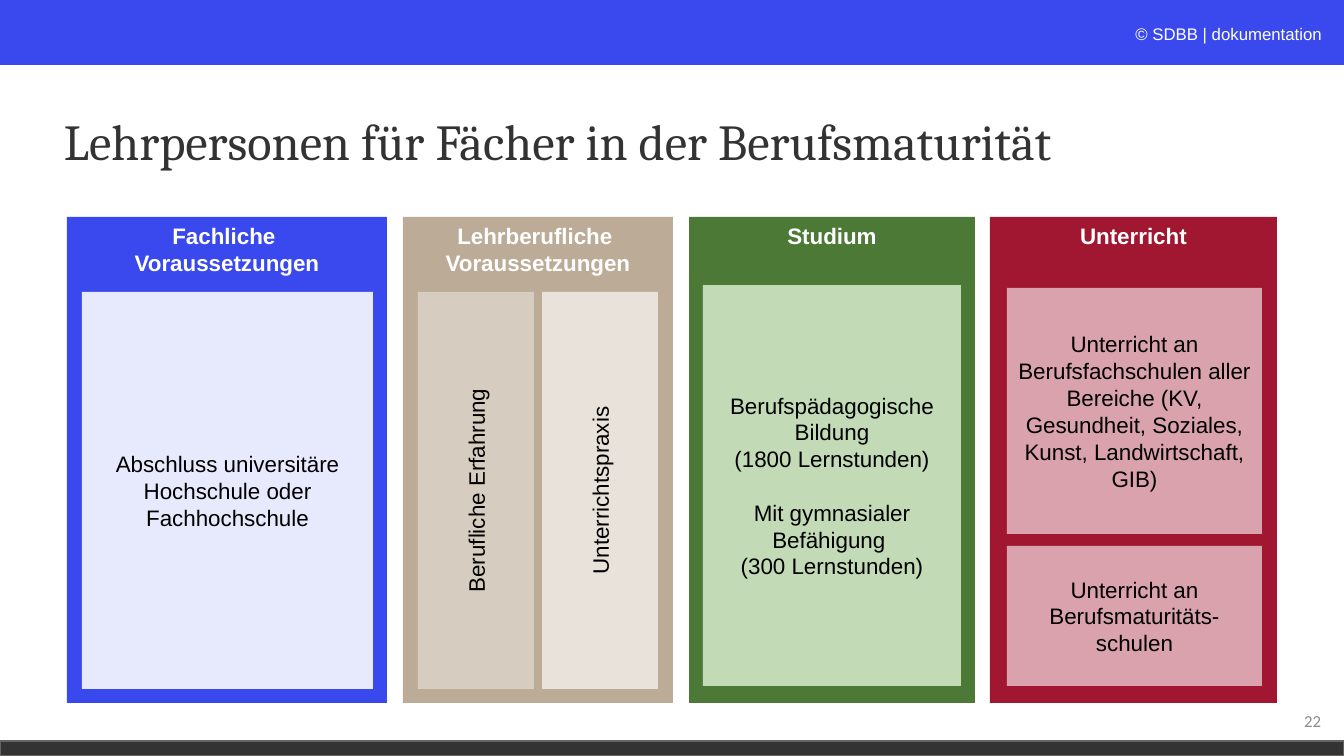
import pptx
import pptx.dml.color
import pptx.enum.shapes
import pptx.enum.text
import pptx.util

EMU_PER_PX = 914400 / 100.8
ALIGN = pptx.enum.text.PP_ALIGN
ANCHOR = pptx.enum.text.MSO_ANCHOR

COLORS = {
    "blue": "3A49EE", "light_blue": "E7E9FD",
    "sand": "BCAB96", "mid_sand": "D6CCBF", "light_sand": "E8E2DB",
    "green": "4C7936", "light_green": "C2DAB6",
    "red": "A11731", "light_red": "DAA2AD",
    "dark": "333333", "border": "666360", "gray": "8C8C8C",
    "white": "FFFFFF", "black": "000000",
}

PANEL_TOP, PANEL_HEIGHT = 217, 486

# Left, width, color, heading
PANELS = [
    (67, 320, "blue", "Fachliche \vVoraussetzungen"),
    (403, 270, "sand", "Lehrberufliche \nVoraussetzungen"),
    (689, 286, "green", "Studium"),
    (990, 287, "red", "Unterricht"),
]

# Left, top, width, height, color, text
CARDS = [
    (82, 292, 291, 397, "light_blue",
     "Abschluss universitäre Hochschule oder Fachhochschule"),
    (703, 285, 258, 401, "light_green",
     "Berufspädagogische Bildung\n(1800 Lernstunden)\n"
     "Mit gymnasialer Befähigung \n(300 Lernstunden)"),
    (1007, 288, 255, 246, "light_red",
     "Unterricht an Berufsfachschulen aller Bereiche "
     "(KV, Gesundheit, Soziales, Kunst, Landwirtschaft, GIB)"),
    (1007, 546, 255, 140, "light_red",
     "Unterricht an Berufsmaturitäts-schulen"),
]

# Left, color, text
VERTICAL_CARDS = [
    (418, "mid_sand", "Berufliche Erfahrung"),
    (542, "light_sand", "Unterrichtspraxis"),
]


def px(value):
    return pptx.util.Emu(round(value * EMU_PER_PX))


def rgb(name):
    return pptx.dml.color.RGBColor.from_string(COLORS[name])


def write_text(shape, text, size, color, align, anchor, font="Arial", bold=False):
    frame = shape.text_frame
    frame.text = text
    frame.word_wrap = True
    frame.vertical_anchor = anchor
    for paragraph in frame.paragraphs:
        paragraph.alignment = align
        for run in paragraph.runs:
            run.font.name = font
            run.font.size = pptx.util.Pt(size)
            run.font.bold = bold
            run.font.color.rgb = rgb(color)
    return frame


def add_bar(slide, left, top, width, height, color):
    shape = slide.shapes.add_shape(
        pptx.enum.shapes.MSO_SHAPE.RECTANGLE,
        px(left), px(top), px(width), px(height))
    shape.shadow.inherit = False
    shape.fill.solid()
    shape.fill.fore_color.rgb = rgb(color)
    shape.line.fill.background()
    return shape


def add_panel(slide, left, width, color, heading):
    shape = add_bar(slide, left, PANEL_TOP, width, PANEL_HEIGHT, color)
    write_text(shape, heading, 16, "white", ALIGN.CENTER, ANCHOR.TOP, bold=True)


def add_card(slide, left, top, width, height, color, text):
    shape = add_bar(slide, left, top, width, height, color)
    write_text(shape, text, 16, "black", ALIGN.CENTER, ANCHOR.MIDDLE)
    return shape


def add_label(slide, left, top, width, height, text, size, color, align, anchor,
              font="Arial"):
    box = slide.shapes.add_textbox(px(left), px(top), px(width), px(height))
    return write_text(box, text, size, color, align, anchor, font)


def main():
    presentation = pptx.Presentation()
    presentation.slide_width = px(1344)
    presentation.slide_height = px(756)
    slide = presentation.slides.add_slide(presentation.slide_layouts[6])

    # Header, footer and page number
    add_bar(slide, 0, 0, 1344, 65, "blue")
    footer = add_bar(slide, 0, 741, 1344, 15, "dark")
    footer.line.color.rgb = rgb("border")
    footer.line.width = pptx.util.Pt(1)
    add_label(slide, 869, 19, 463, 30, "© SDBB | dokumentation", 12, "white",
              ALIGN.RIGHT, ANCHOR.TOP)
    add_label(slide, 1029, 701, 302, 40, "22", 12, "gray",
              ALIGN.RIGHT, ANCHOR.MIDDLE, "Calibri")

    # Title
    title = add_label(slide, 54, 71, 1159, 146,
                      "Lehrpersonen für Fächer in der Berufsmaturität", 36,
                      "dark", ALIGN.LEFT, ANCHOR.MIDDLE, "Cambria")
    title.paragraphs[0].line_spacing = 0.9

    # Four panels with their cards
    for panel in PANELS:
        add_panel(slide, *panel)
    for card in CARDS:
        shape = add_card(slide, *card)
        # Space between the two courses of study
        for paragraph in shape.text_frame.paragraphs[2:3]:
            paragraph.space_before = pptx.util.Pt(19)

    # Cards with text running upwards
    for left, color, text in VERTICAL_CARDS:
        shape = add_card(slide, left, 292, 116, 397, color, text)
        shape.text_frame._txBody.bodyPr.set("vert", "vert270")

    presentation.save("out.pptx")


if __name__ == "__main__":
    main()
